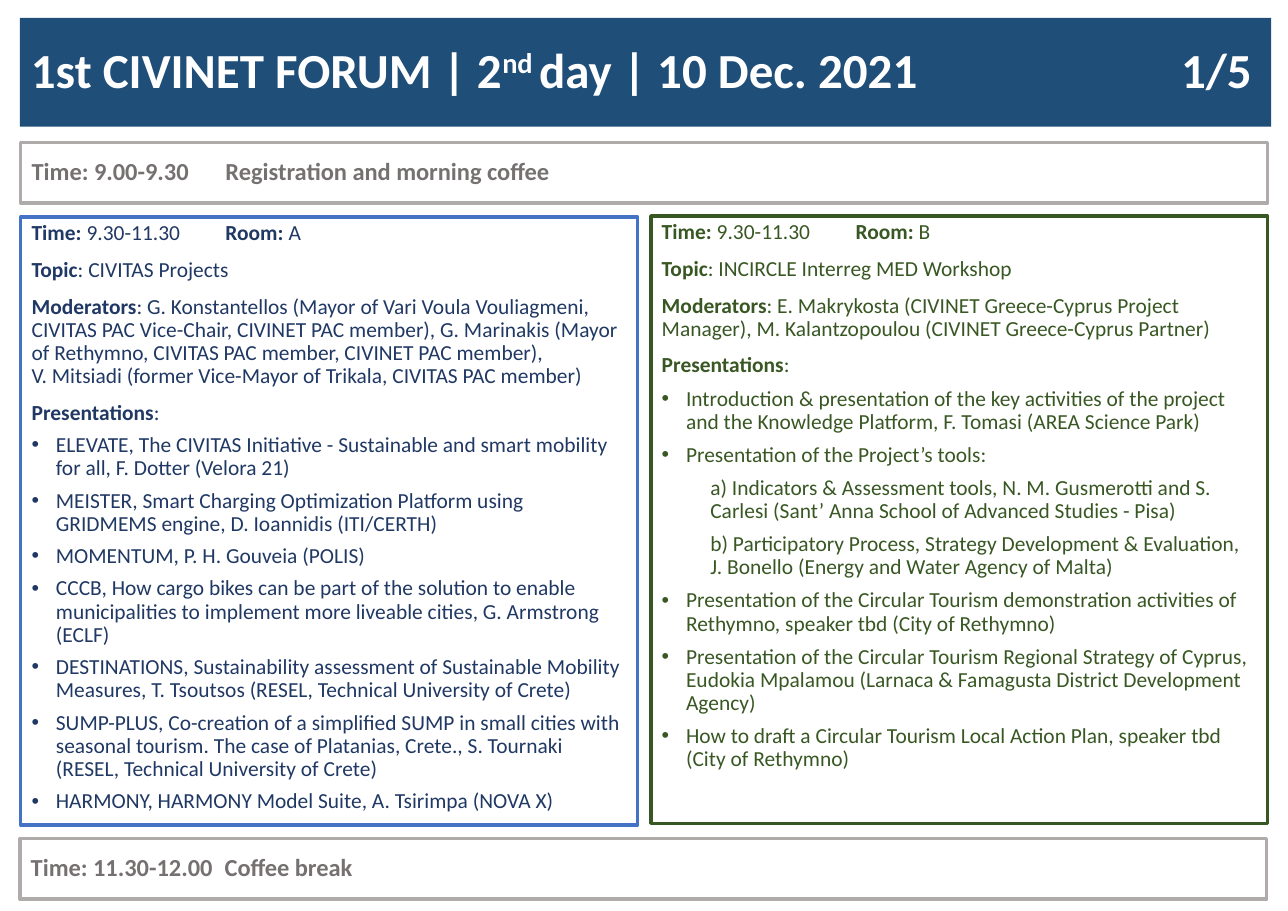
from dataclasses import dataclass

from lxml.etree import SubElement
from pptx import Presentation
from pptx.dml.color import RGBColor
from pptx.enum.shapes import MSO_SHAPE as Shape
from pptx.enum.text import MSO_ANCHOR as Anchor, MSO_AUTO_SIZE as AutoSize, PP_ALIGN as Align
from pptx.oxml.ns import qn
from pptx.util import Cm, Pt


@dataclass(frozen=True)
class Theme:
    font: str = "Calibri"
    banner: str = "1F4E79"
    white: str = "FFFFFF"
    blue_line: str = "4472C4"
    blue_text: str = "203864"
    green: str = "385723"
    grey_line: str = "AFABAB"
    grey_text: str = "767171"
    title_size: float = 32
    break_size: float = 16
    body_size: float = 14
    frame_width: float = 2.25
    heading_gap: float = 8.8


THEME = Theme()
TAB = 4.47
INDENT = 0.56

# Text marks: "|" switches between bold and regular, "• " starts a bullet,
# "> " starts an indented sub-item, "\v" breaks the line.
SESSION_A = [
    "Time: |9.30-11.30\t|Room: |A",
    "Topic|: CIVITAS Projects",
    "Moderators|: G. Konstantellos (Mayor of Vari Voula Vouliagmeni, CIVITAS PAC Vice-Chair, "
    "CIVINET PAC member), G. Marinakis (Mayor of Rethymno, CIVITAS PAC member, "
    "CIVINET PAC member),\vV. Mitsiadi (former Vice-Mayor of Trikala, CIVITAS PAC member)",
    "Presentations|:",
    "• ELEVATE, The CIVITAS Initiative - Sustainable and smart mobility for all, "
    "F. Dotter (Velora 21)",
    "• MEISTER, Smart Charging Optimization Platform using GRIDMEMS engine, "
    "D. Ioannidis (ITI/CERTH)",
    "• MOMENTUM, P. H. Gouveia (POLIS)",
    "• CCCB, How cargo bikes can be part of the solution to enable municipalities to "
    "implement more liveable cities, G. Armstrong (ECLF)",
    "• DESTINATIONS, Sustainability assessment of Sustainable Mobility Measures, "
    "T. Tsoutsos (RESEL, Technical University of Crete)",
    "• SUMP-PLUS, Co-creation of a simplified SUMP in small cities with seasonal tourism. "
    "The case of Platanias, Crete., S. Tournaki (RESEL, Technical University of Crete)",
    "• HARMONY, HARMONY Model Suite, A. Tsirimpa (NOVA X)",
]
SESSION_B = [
    "Time: |9.30-11.30\t|Room: |B",
    "Topic|: INCIRCLE Interreg MED Workshop",
    "Moderators|: E. Makrykosta (CIVINET Greece-Cyprus Project Manager), "
    "Μ. Kalantzopoulou (CIVINET Greece-Cyprus Partner)",
    "Presentations|:",
    "• Introduction & presentation of the key activities of the project and the "
    "Knowledge Platform, F. Tomasi (AREA Science Park)",
    "• Presentation of the Project’s tools:",
    "> a) Indicators & Assessment tools, N. M. Gusmerotti and S. Carlesi "
    "(Sant’ Anna School of Advanced Studies - Pisa)",
    "> b) Participatory Process, Strategy Development & Evaluation, J. Bonello "
    "(Energy and Water Agency of Malta)",
    "• Presentation of the Circular Tourism demonstration activities of Rethymno, "
    "speaker tbd (City of Rethymno)",
    "• Presentation of the Circular Tourism Regional Strategy of Cyprus, Eudokia Mpalamou "
    "(Larnaca & Famagusta District Development Agency)",
    "• How to draft a Circular Tourism Local Action Plan, speaker tbd (City of Rethymno)",
]


def style(span, size, color, bold):
    span.font.name = THEME.font
    span.font.size = Pt(size)
    span.font.bold = bold
    span.font.color.rgb = RGBColor.from_string(color)


def space(para, before):
    para.alignment = Align.LEFT
    para.line_spacing = 0.9
    para.space_before = Pt(before)


def set_tab(para, position, side="l"):
    tabs = SubElement(para._p.get_or_add_pPr(), qn("a:tabLst"))
    SubElement(tabs, qn("a:tab"), pos=str(Cm(position)), algn=side)


def indent(para, left, bullet):
    props = para._p.get_or_add_pPr()
    props.set("marL", str(Cm(left)))
    props.set("indent", str(Cm(-INDENT if bullet else 0)))
    if bullet:
        SubElement(props, qn("a:buFont"), typeface="Arial")
        SubElement(props, qn("a:buChar"), char="•")


def add_frame(page, box, line_color, anchor):
    """Outlined, unfilled box ready for text."""
    frame = page.shapes.add_shape(Shape.RECTANGLE, *map(Cm, box))
    frame.shadow.inherit = False
    frame.fill.background()
    frame.line.color.rgb = RGBColor.from_string(line_color)
    frame.line.width = Pt(THEME.frame_width)
    text = frame.text_frame
    text.word_wrap = True
    text.vertical_anchor = anchor
    return text


def add_banner(page, box):
    """Title placeholder with the page count at the right tab."""
    title = page.shapes.title
    title.left, title.top, title.width, title.height = map(Cm, box)
    title.fill.solid()
    title.fill.fore_color.rgb = RGBColor.from_string(THEME.banner)
    text = title.text_frame
    text.auto_size = AutoSize.NONE
    text.vertical_anchor = Anchor.MIDDLE
    para = text.paragraphs[0]
    space(para, 0)
    set_tab(para, box[2] - 0.7, "r")
    for words in ("1st CIVINET FORUM | 2", "nd ", "day | 10 Dec. 2021\t1/5"):
        span = para.add_run()
        span.text = words
        style(span, THEME.title_size, THEME.white, True)
        if words == "nd ":
            span._r.get_or_add_rPr().set("baseline", "30000")


def add_break_bar(page, box, words):
    """Grey bar for a time slot without sessions."""
    para = add_frame(page, box, THEME.grey_line, Anchor.MIDDLE).paragraphs[0]
    para.text = words
    space(para, THEME.heading_gap)
    set_tab(para, TAB)
    style(para.runs[0], THEME.break_size, THEME.grey_text, True)


def add_words(para, words, color, bold):
    for number, line in enumerate(words.split("\v")):
        if number:
            para.add_line_break()
            line_break = para._p.findall(qn("a:br"))[-1]
            SubElement(line_break, qn("a:rPr"), sz=str(THEME.body_size * 100))
        span = para.add_run()
        span.text = line
        style(span, THEME.body_size, color, bold)


def add_session(page, box, lines, line_color, text_color, item_gap, grow=False):
    """Session box: bold-labelled headings, then the presentations."""
    text = add_frame(page, box, line_color, Anchor.TOP)
    if grow:
        text.auto_size = AutoSize.SHAPE_TO_FIT_TEXT
    for number, line in enumerate(lines):
        para = text.add_paragraph() if number else text.paragraphs[0]
        bullet, sub_item = line.startswith("• "), line.startswith("> ")
        if bullet or sub_item:
            space(para, item_gap)
            if sub_item:
                para.level = 1
            indent(para, INDENT * (2 if sub_item else 1), bullet)
            add_words(para, line[2:], text_color, False)
        else:
            space(para, THEME.heading_gap)
            set_tab(para, TAB)
            for part, words in enumerate(line.split("|")):
                add_words(para, words, text_color, part % 2 == 0)


def main():
    deck = Presentation()
    deck.slide_width, deck.slide_height = Cm(29.7), Cm(21)
    page = deck.slides.add_slide(deck.slide_layouts[5])

    # Banner and sessions
    add_banner(page, (0.46, 0.41, 28.85, 2.51))
    add_session(page, (0.48, 5, 14.22, 14.02), SESSION_A,
                THEME.blue_line, THEME.blue_text, 6, grow=True)
    add_session(page, (15.01, 4.98, 14.22, 14), SESSION_B, THEME.green, THEME.green, 6.5)

    # Breaks before and after
    add_break_bar(page, (0.48, 3.28, 28.75, 1.4),
                  "Time: 9.00-9.30\tRegistration and morning coffee")
    add_break_bar(page, (0.46, 19.33, 28.75, 1.4), "Time: 11.30-12.00\tCoffee break")

    deck.save("out.pptx")


if __name__ == "__main__":
    main()
